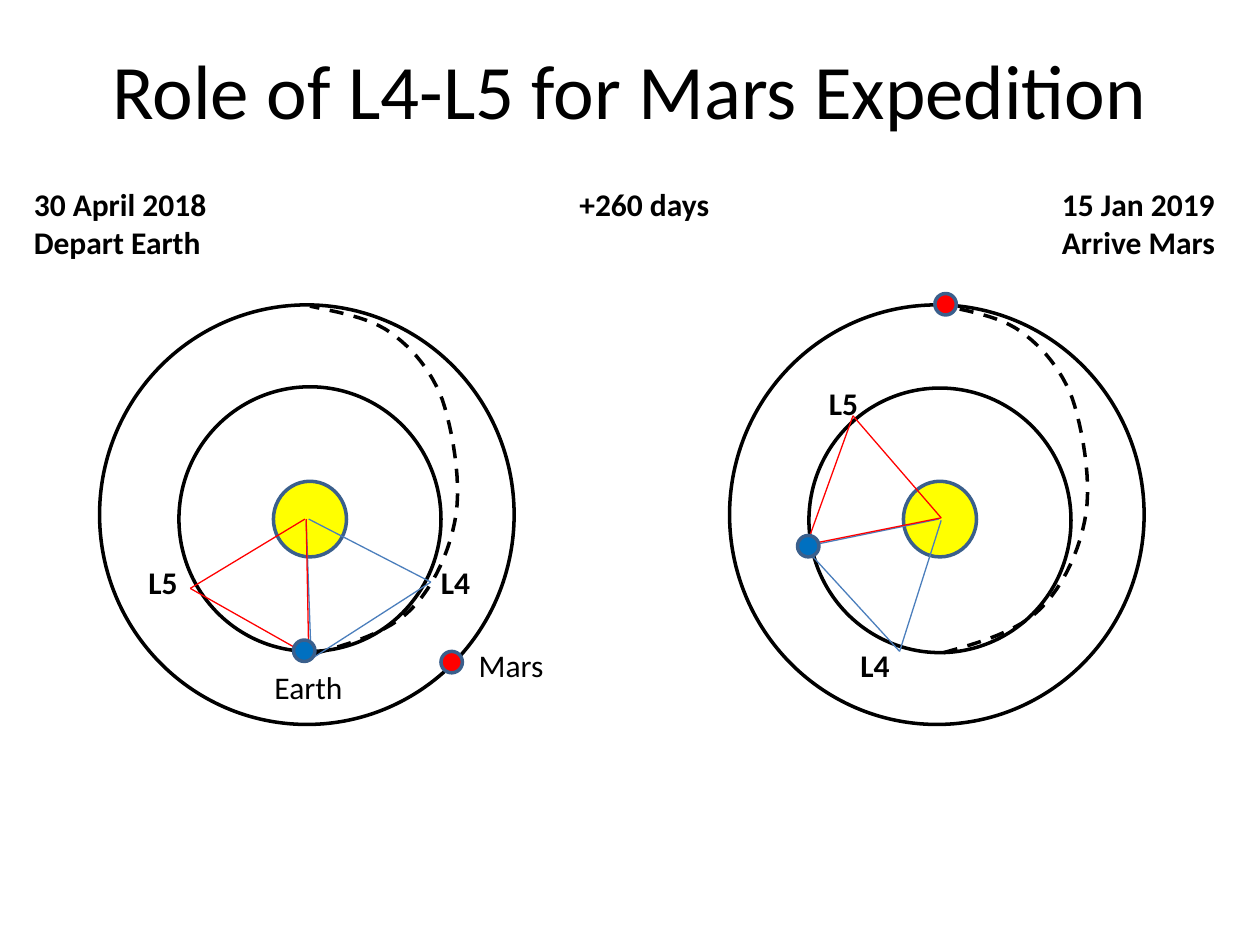
from lxml import etree
from pptx import Presentation
from pptx.dml.color import RGBColor
from pptx.enum.dml import MSO_LINE
from pptx.enum.shapes import MSO_CONNECTOR, MSO_SHAPE
from pptx.enum.text import MSO_ANCHOR, MSO_AUTO_SIZE, PP_ALIGN
from pptx.oxml.ns import qn
from pptx.util import Inches, Pt

BLACK = RGBColor(0x00, 0x00, 0x00)
RED = RGBColor(0xFF, 0x00, 0x00)
YELLOW = RGBColor(0xFF, 0xFF, 0x00)
EARTH_BLUE = RGBColor(0x00, 0x70, 0xC0)
RIM_BLUE = RGBColor(0x3A, 0x5F, 0x8C)
L4_BLUE = RGBColor(0x4B, 0x7E, 0xBC)

PLANET = 0.17
DIAGRAM_GAP = 5

# Bezier segments: start point, then two controls and an end for each curve
TRANSFER_START = (2.49, 5.19)
TRANSFER_CURVES = [
    ((2.78, 5.11), (3.08, 5.02), (3.26, 4.84)),
    ((3.45, 4.65), (3.58, 4.35), (3.62, 4.08)),
    ((3.66, 3.80), (3.59, 3.41), (3.51, 3.17)),
    ((3.42, 2.94), (3.28, 2.77), (3.10, 2.64)),
    ((2.93, 2.52), (2.69, 2.48), (2.46, 2.43)),
]


def bezier_points(start, curves, steps=12):
    points = [start]
    for c1, c2, end in curves:
        p0 = points[-1]
        for i in range(1, steps + 1):
            t = i / steps
            u = 1 - t
            points.append(tuple(
                u**3 * a + 3 * u * u * t * b + 3 * u * t * t * c + t**3 * d
                for a, b, c, d in zip(p0, c1, c2, end)))
    return points


class SlideBuilder:
    font = "Calibri"
    outline = Pt(2)
    hairline = Pt(0.75)

    def __init__(self, slide):
        self.s = slide

    def ellipse(self, x, y, w, h, fill=None, line=BLACK):
        sp = self.s.shapes.add_shape(
            MSO_SHAPE.OVAL, Inches(x), Inches(y), Inches(w), Inches(h))
        sp.shadow.inherit = False
        if fill is None:
            sp.fill.background()
        else:
            sp.fill.solid()
            sp.fill.fore_color.rgb = fill
        sp.line.color.rgb = line
        sp.line.width = self.outline

    def planet(self, x, y, fill):
        self.ellipse(x, y, PLANET, PLANET, fill, RIM_BLUE)

    def dashed_path(self, points):
        points = [(Inches(x), Inches(y)) for x, y in points]
        builder = self.s.shapes.build_freeform(*points[0])
        builder.add_line_segments(points[1:], close=False)
        sp = builder.convert_to_shape()
        sp.shadow.inherit = False
        sp.fill.background()
        sp.line.color.rgb = BLACK
        sp.line.width = self.outline
        sp.line.dash_style = MSO_LINE.DASH

    def line(self, start, end, color):
        cxn = self.s.shapes.add_connector(
            MSO_CONNECTOR.STRAIGHT, *map(Inches, start + end))
        cxn.line.color.rgb = color
        cxn.line.width = self.hairline
        etree.SubElement(cxn._element.spPr, qn("a:effectLst"))

    def text(self, x, y, w, h, *lines, size=18, bold=True):
        tb = self.s.shapes.add_textbox(Inches(x), Inches(y), Inches(w), Inches(h))
        tf = tb.text_frame
        tf.word_wrap = False
        tf.auto_size = MSO_AUTO_SIZE.SHAPE_TO_FIT_TEXT
        tf.text = "\n".join(lines)
        for p in tf.paragraphs:
            p.font.name = self.font
            p.font.size = Pt(size)
            p.font.bold = bold
            p.font.color.rgb = BLACK
        return tf

    def title(self, text):
        tf = self.text(0.5, 0.08, 9, 1.25, text, size=44, bold=False)
        tf.auto_size = MSO_AUTO_SIZE.NONE
        tf.word_wrap = True
        tf.vertical_anchor = MSO_ANCHOR.MIDDLE
        tf.paragraphs[0].alignment = PP_ALIGN.CENTER

    def orbits(self, dx, inner_top, transfer_dy):
        """Both orbits, the transfer path and the Sun, moved right by dx."""
        self.ellipse(0.79 + dx, 2.42, 3.29, 3.33)
        self.ellipse(1.42 + dx, inner_top, 2.08, 2.1)
        path = bezier_points(TRANSFER_START, TRANSFER_CURVES)
        self.dashed_path([(x + dx, y + transfer_dy) for x, y in path])
        self.ellipse(2.17 + dx, 3.82, 0.58, 0.6, YELLOW, RIM_BLUE)


def main():
    prs = Presentation()
    prs.slide_width, prs.slide_height = Inches(10), Inches(7.5)
    b = SlideBuilder(prs.slides.add_slide(prs.slide_layouts[6]))

    b.orbits(0, 3.07, 0)
    b.orbits(DIAGRAM_GAP, 3.08, -0.01)
    b.planet(7.42, 2.33, RED)
    b.planet(3.5, 5.17, RED)

    triangle_sides = [
        # Arrival
        ((7.45, 4.12), (6.38, 4.34), L4_BLUE),
        ((7.14, 5.17), (6.38, 4.34), L4_BLUE),
        ((7.47, 4.13), (7.14, 5.17), L4_BLUE),
        ((6.42, 4.32), (7.47, 4.11), RED),
        ((6.77, 3.30), (7.47, 4.11), RED),
        ((6.41, 4.30), (6.77, 3.30), RED),
        # Departure
        ((2.43, 4.13), (2.47, 5.23), L4_BLUE),
        ((3.42, 4.62), (2.47, 5.23), L4_BLUE),
        ((2.45, 4.12), (3.42, 4.62), L4_BLUE),
        ((2.45, 5.18), (2.43, 4.12), RED),
        ((1.51, 4.67), (2.42, 4.12), RED),
        ((2.43, 5.19), (1.51, 4.67), RED),
    ]
    for start, end, color in triangle_sides:
        b.line(start, end, color)

    b.planet(2.33, 5.08, EARTH_BLUE)
    b.planet(6.33, 4.25, EARTH_BLUE)

    for x, y, name in [(1.08, 4.42, "L5"), (3.4, 4.42, "L4"),
                       (6.48, 3, "L5"), (6.73, 5.08, "L4")]:
        b.text(x, y, 0.44, 0.4, name)

    b.text(0.17, 1.42, 1.59, 0.71, "30 April 2018", "Depart Earth")
    b.text(8.33, 1.42, 1.43, 0.71, "15 Jan 2019", "Arrive Mars")
    b.text(4.5, 1.42, 1.24, 0.4, "+260 days")
    b.title("Role of L4-L5 for Mars Expedition")
    b.text(2.08, 5.25, 0.75, 0.4, "Earth", bold=False)
    b.text(3.7, 5.08, 0.72, 0.4, "Mars", bold=False)

    prs.save("out.pptx")


if __name__ == "__main__":
    main()
